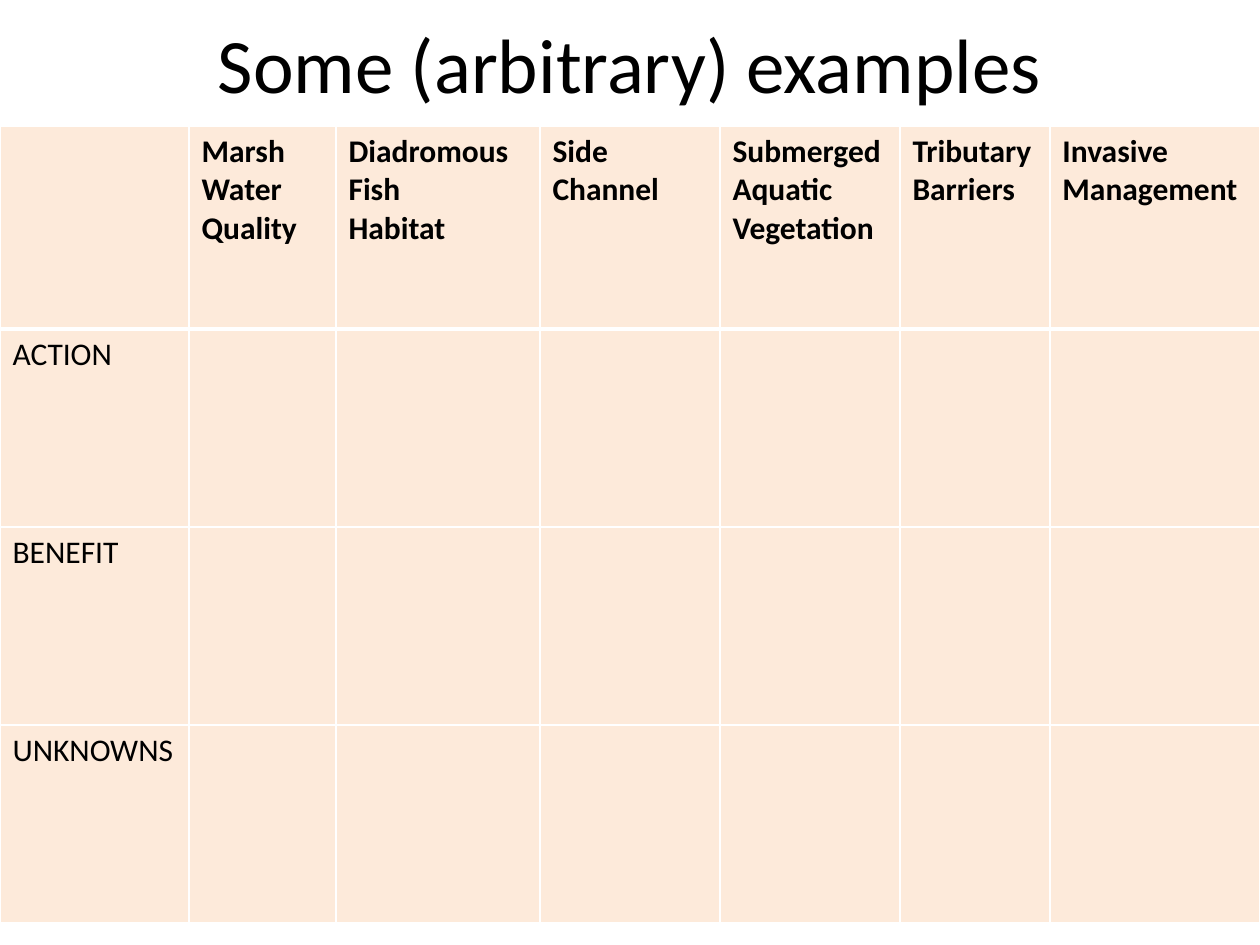
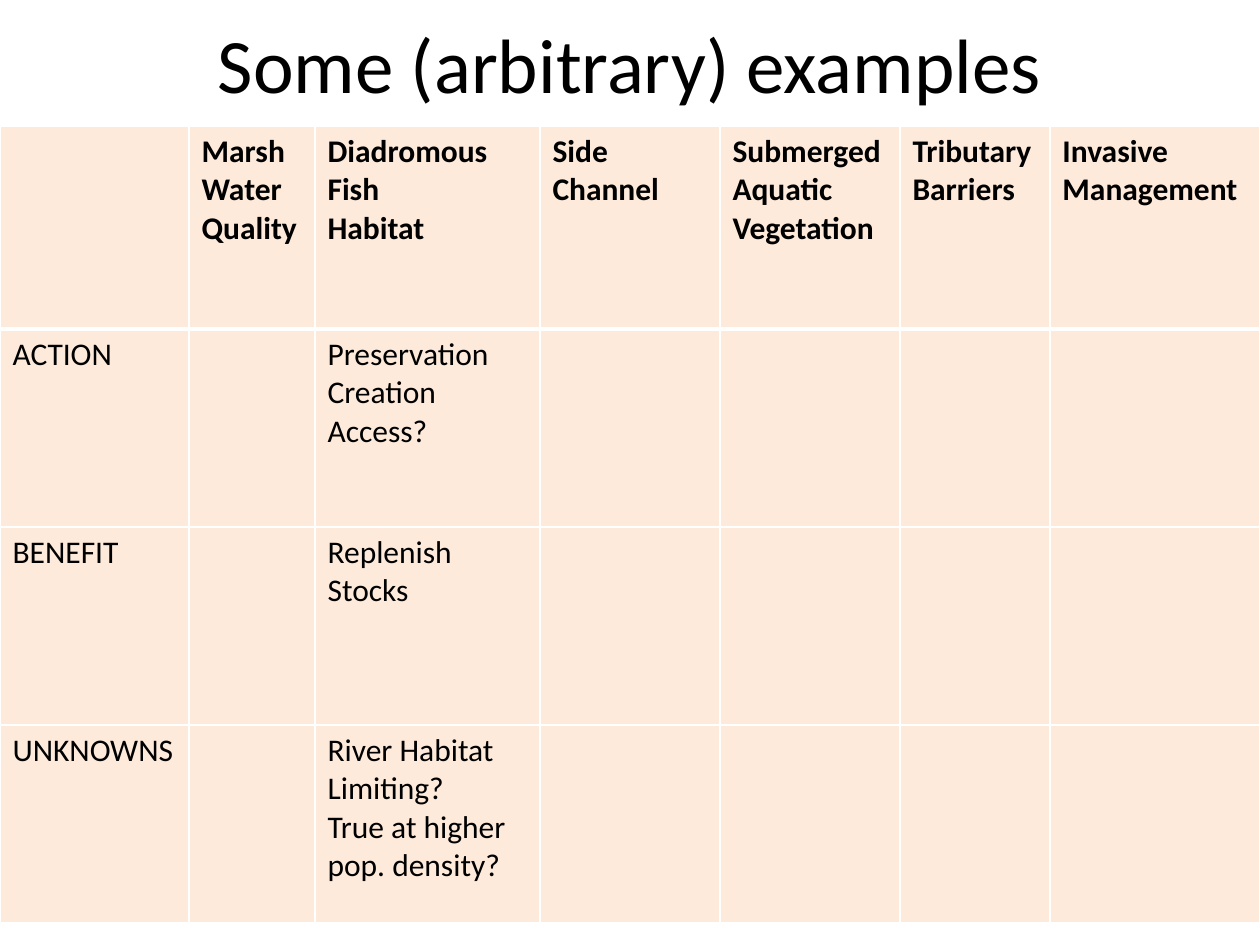
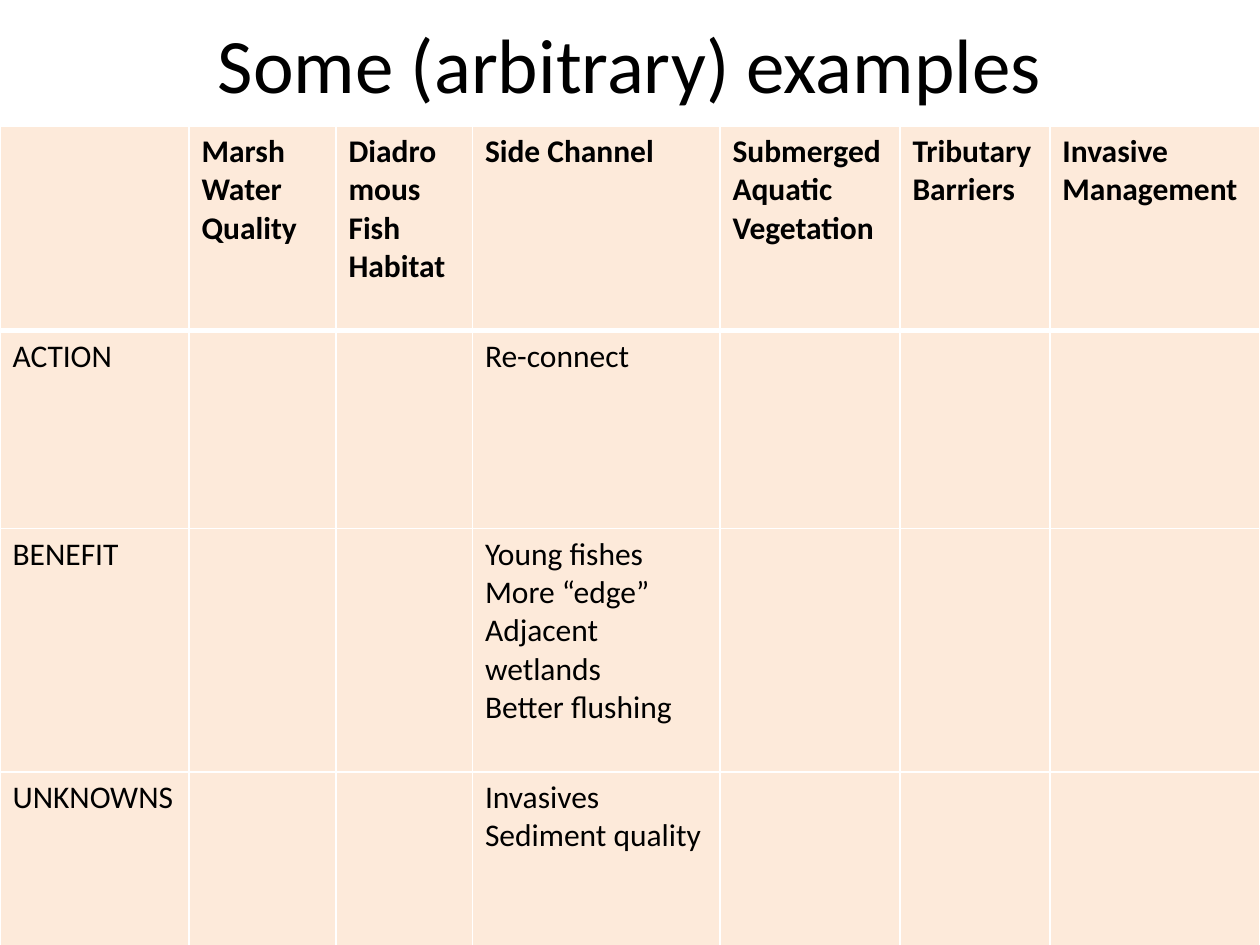
from dataclasses import dataclass
from itertools import pairwise

from lxml.etree import SubElement
from pptx import Presentation
from pptx.dml.color import RGBColor
from pptx.enum.text import MSO_ANCHOR, PP_ALIGN
from pptx.oxml.ns import qn
from pptx.util import Pt


@dataclass(frozen=True)
class Theme:
    font: str = "Calibri"
    ink: str = "000000"
    cell: str = "FDEADA"
    rule: str = "FFFFFF"
    title: int = 44
    body: int = 18
    thin: int = 1
    thick: int = 3


THEME = Theme()
TITLE = "Some (arbitrary) examples"
TITLE_BOX = (36, 0, 648, 72)
GRID_BOX = (0, 72, 720)

HEADS = ["", "Marsh\nWater\nQuality", "Diadromous\nFish\nHabitat", "Side Channel",
         "Submerged\nAquatic\nVegetation", "Tributary\nBarriers",
         "Invasive\nManagement"]
LABELS = ["ACTION", "BENEFIT", "UNKNOWNS"]
FISH, SIDE = 2, 3

# Column edges right of the side channel stay fixed
RIGHT = [411.43, 514.29, 600, 720]
ROWS = [116, 113.14, 113.14, 113.14]

# Per slide: inner column edges, row heights, filled column, its entries
SLIDES = [
    ([108, 192, 308.57], ROWS, None, []),
    ([108, 180, 308.57], ROWS, FISH,
     ["Preservation\nCreation\nAccess?",
      "Replenish Stocks",
      "River Habitat Limiting?\nTrue at higher pop. density?"]),
    ([108, 192, 270], [117, 113.14, 139, 113.14], SIDE,
     ["Re-connect",
      "Young fishes\nMore “edge”\nAdjacent wetlands\nBetter flushing",
      "Invasives\nSediment quality"]),
]


def style(frame, size, bold=False):
    for para in frame.paragraphs:
        for run in para.runs:
            font = run.font
            font.name, font.size, font.bold = THEME.font, Pt(size), bold
            font.color.rgb = RGBColor.from_string(THEME.ink)


def border(cell, top, bottom):
    """Draw the four cell edges; they must precede the fill."""
    props = cell._tc.get_or_add_tcPr()
    widths = {"L": THEME.thin, "R": THEME.thin, "T": top, "B": bottom}
    for side, width in widths.items():
        line = SubElement(props, qn(f"a:ln{side}"), w=str(Pt(width)))
        fill = SubElement(line, qn("a:solidFill"))
        SubElement(fill, qn("a:srgbClr"), val=THEME.rule)


def add_title(slide, box):
    shape = slide.shapes.title
    shape.left, shape.top, shape.width, shape.height = map(Pt, box)
    frame = shape.text_frame
    frame.text = TITLE
    frame.vertical_anchor = MSO_ANCHOR.MIDDLE
    frame.paragraphs[0].alignment = PP_ALIGN.CENTER
    style(frame, THEME.title)


def add_grid(slide, box, edges, rows, focus, notes):
    left, top, width = box
    table = slide.shapes.add_table(
        len(rows), len(HEADS), Pt(left), Pt(top), Pt(width), Pt(sum(rows))).table
    table.horz_banding = False

    # Column widths and row heights
    for col, (start, end) in zip(table.columns, pairwise([0, *edges, *RIGHT])):
        col.width = Pt(end - start)
    for row, height in zip(table.rows, rows):
        row.height = Pt(height)

    # Text of the head row, the labels and the filled column
    texts = {(0, c): head for c, head in enumerate(HEADS)}
    texts |= {(r, 0): label for r, label in enumerate(LABELS, 1)}
    texts |= {(r, focus): note for r, note in enumerate(notes, 1)}

    for r in range(len(rows)):
        for c in range(len(HEADS)):
            cell = table.cell(r, c)
            border(cell, THEME.thick if r == 1 else THEME.thin,
                   THEME.thick if r == 0 else THEME.thin)
            cell.fill.solid()
            cell.fill.fore_color.rgb = RGBColor.from_string(THEME.cell)
            if text := texts.get((r, c)):
                cell.text_frame.text = text
                style(cell.text_frame, THEME.body, bold=r == 0)


def main():
    deck = Presentation()
    deck.slide_width, deck.slide_height = Pt(720), Pt(540)
    for edges, rows, focus, notes in SLIDES:
        slide = deck.slides.add_slide(deck.slide_layouts[5])
        add_title(slide, TITLE_BOX)
        add_grid(slide, GRID_BOX, edges, rows, focus, notes)
    deck.save("out.pptx")


if __name__ == "__main__":
    main()
